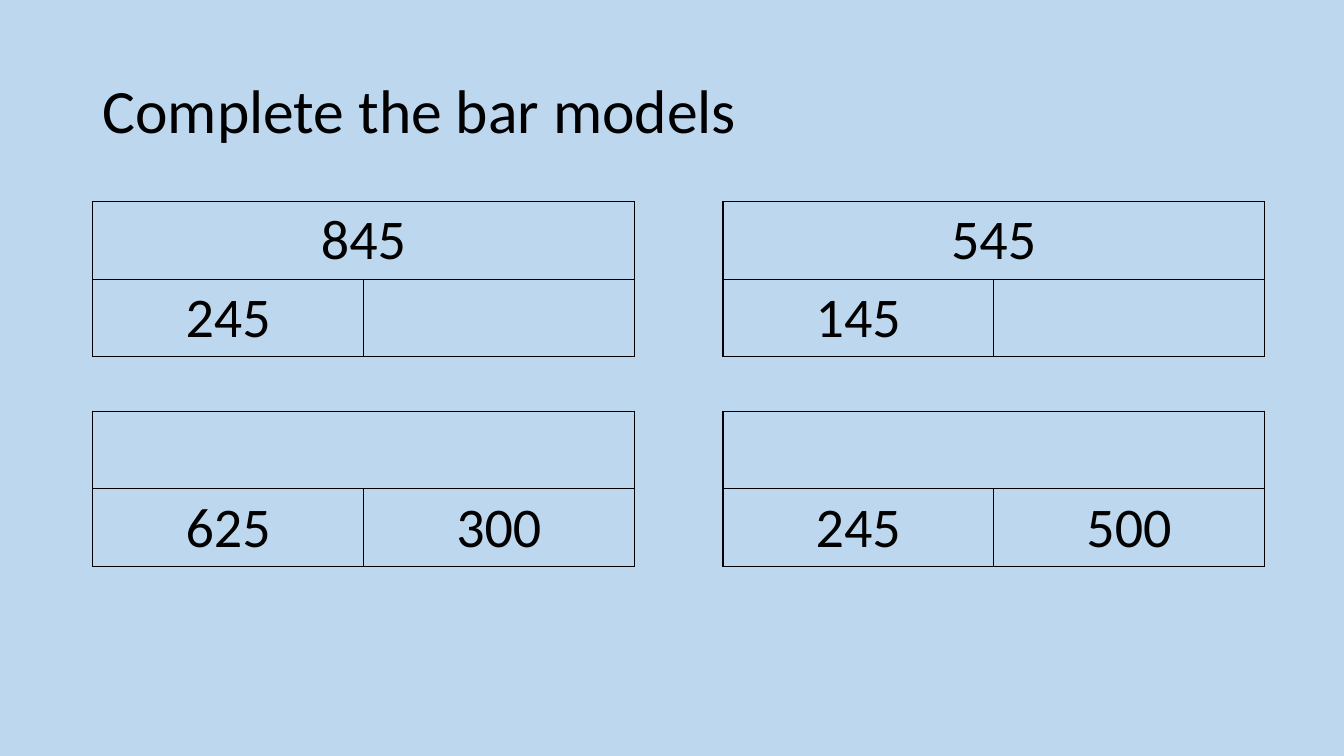
"""Build a slide of four part-whole bar models to complete."""
from lxml import etree
from pptx import Presentation
from pptx.dml.color import RGBColor
from pptx.enum.text import MSO_ANCHOR, PP_ALIGN
from pptx.oxml.ns import qn
from pptx.util import Inches, Pt

SKY = RGBColor(0xBD, 0xD7, 0xEE)
BLACK = RGBColor(0, 0, 0)
MIDDLE = MSO_ANCHOR.MIDDLE
TOP = MSO_ANCHOR.TOP
LEFT = PP_ALIGN.LEFT
CENTER = PP_ALIGN.CENTER

LEFTS = (0.92, 7.17)
TOPS = (2, 4.08)
BAR_WIDTH = 5.37
ROW_HEIGHT = 0.77
BAR_MODELS = (
    (("845", "245", ""), ("545", "145", "")),
    (("", "625", "300"), ("", "245", "500")),
)


class BarModelSlide:
    def __init__(self, slide):
        self.slide = slide
        self.font = {"name": "Calibri"}
        self.border = Pt(1)
        slide.background.fill.solid()
        slide.background.fill.fore_color.rgb = SKY

    def label(self, paragraph, text, size, alignment):
        paragraph.alignment = alignment
        paragraph.text = text
        for key, value in {**self.font, "size": Pt(size)}.items():
            setattr(paragraph.font, key, value)
            for run in paragraph.runs:
                setattr(run.font, key, value)
        for run in paragraph.runs:
            run.font.color.rgb = BLACK

    def title(self, text, left, top, width, height):
        heading = self.slide.shapes.add_textbox(
            Inches(left), Inches(top), Inches(width), Inches(height)
        ).text_frame
        for key, value in {"word_wrap": True, "vertical_anchor": MIDDLE}.items():
            setattr(heading, key, value)
        self.label(heading.paragraphs[0], text, 44, LEFT)
        heading.paragraphs[0].line_spacing = 0.9

    def outline(self, cell):
        properties = cell._tc.get_or_add_tcPr()
        for side in ("a:lnL", "a:lnR", "a:lnT", "a:lnB"):
            line = etree.SubElement(properties, qn(side), w=str(self.border))
            fill = etree.SubElement(line, qn("a:solidFill"))
            etree.SubElement(fill, qn("a:srgbClr"), val=str(BLACK))

    def bar_model(self, numbers, left, top):
        whole, *parts = numbers
        bars = self.slide.shapes.add_table(
            2, 2, Inches(left), Inches(top), Inches(BAR_WIDTH), Inches(2 * ROW_HEIGHT)
        ).table
        for key in ("first_row", "horz_banding"):
            setattr(bars, key, False)
        bars.cell(0, 0).merge(bars.cell(0, 1))
        for cell, number in zip(bars.iter_cells(), (whole, "", *parts)):
            self.outline(cell)
            cell.fill.background()
            cell.vertical_anchor = TOP
            self.label(cell.text_frame.paragraphs[0], number, 40, CENTER)


def main():
    deck = Presentation()
    deck.slide_width, deck.slide_height = Inches(13.33), Inches(7.5)
    page = BarModelSlide(deck.slides.add_slide(deck.slide_layouts[6]))
    page.title("Complete the bar models", LEFTS[0], 0.4, 11.5, 1.45)
    for top, models in zip(TOPS, BAR_MODELS):
        for left, numbers in zip(LEFTS, models):
            page.bar_model(numbers, left, top)
    deck.save("out.pptx")


if __name__ == "__main__":
    main()
